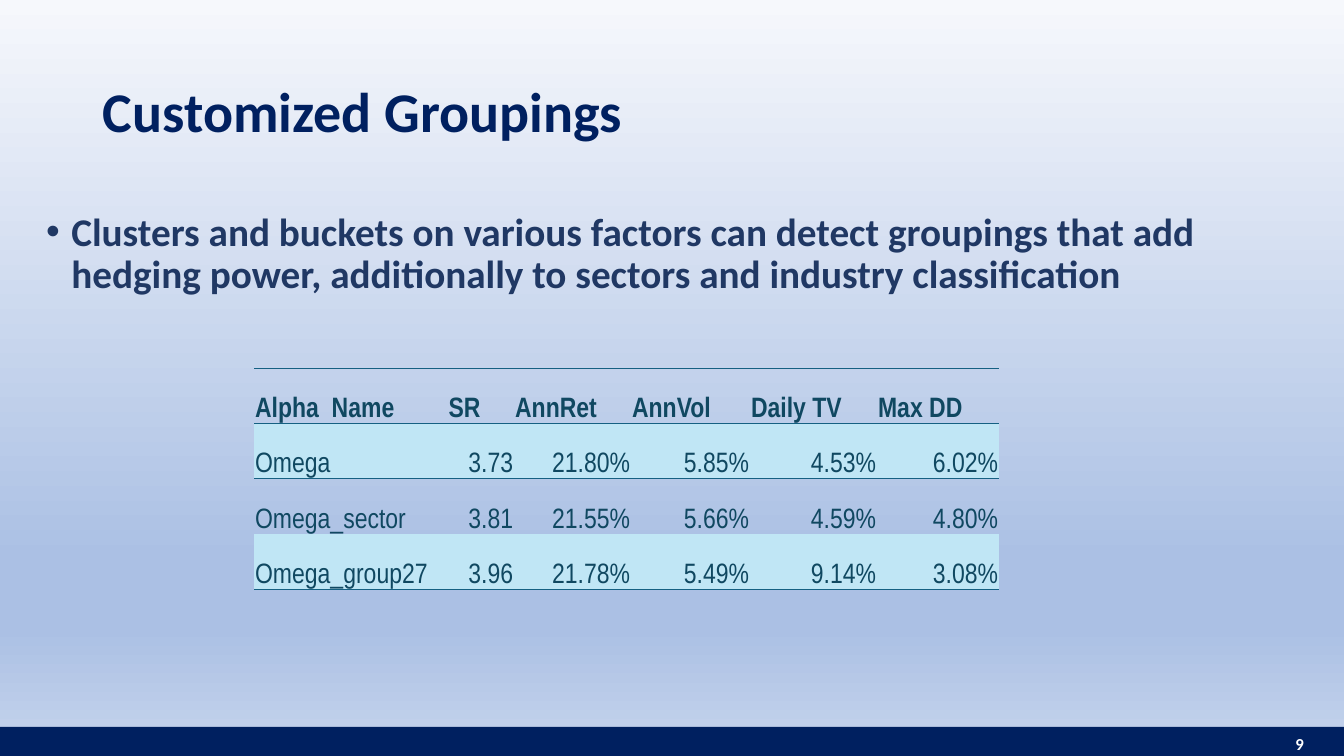
from lxml.etree import SubElement
from pptx import Presentation
from pptx.dml.color import RGBColor
from pptx.enum.shapes import MSO_SHAPE as Shape
from pptx.enum.text import MSO_ANCHOR as Anchor, PP_ALIGN as Align
from pptx.oxml import parse_xml
from pptx.oxml.ns import nsdecls, qn
from pptx.util import Inches, Pt

NAVY = RGBColor(0x00, 0x20, 0x60)
SLATE = RGBColor(0x20, 0x38, 0x64)
WHITE = RGBColor(0xFF, 0xFF, 0xFF)
OUTLINE = RGBColor(0x44, 0x72, 0xC4)
TABLE_TEXT = RGBColor(0x10, 0x48, 0x61)
TABLE_RULE = RGBColor(0x15, 0x60, 0x82)
BAND = RGBColor(0xC0, 0xE6, 0xF5)
BACKGROUND = [
    (0, RGBColor(0xF6, 0xF8, 0xFC)),
    (74, RGBColor(0xAB, 0xC0, 0xE4)),
    (83, RGBColor(0xAB, 0xC0, 0xE4)),
    (100, RGBColor(0xC7, 0xD5, 0xED)),
]
NO_STYLE = "{2D5ABB26-0587-4C30-8999-92F81FD0307C}"

COLUMN_WIDTHS = [1.92, 0.66, 1.16, 1.18, 1.26, 1.21]
ROW_HEIGHT = 0.55
RESULTS = [
    ["Alpha  Name", "SR", "AnnRet", "AnnVol", "Daily TV", "Max DD"],
    ["Omega", "3.73", "21.80%", "5.85%", "4.53%", "6.02%"],
    ["Omega_sector", "3.81", "21.55%", "5.66%", "4.59%", "4.80%"],
    ["Omega_group27", "3.96", "21.78%", "5.49%", "9.14%", "3.08%"],
]


def line_xml(tag, color, points):
    return parse_xml(
        f'<a:{tag} {nsdecls("a")} w="{Pt(points)}"><a:solidFill>'
        f'<a:srgbClr val="{color}"/></a:solidFill></a:{tag}>'
    )


class SlideBuilder:
    font = "Calibri"
    table_font = "Arial Narrow"

    def __init__(self, presentation):
        self.slide = presentation.slides.add_slide(presentation.slide_layouts[5])

    def background(self, stops):
        fill = self.slide.background.fill
        fill.gradient()
        fill.gradient_angle = 270
        stop_list = next(self.slide.element.iter(qn("a:gsLst")))
        for stop in list(stop_list):
            stop_list.remove(stop)
        for position, color in stops:
            stop = SubElement(stop_list, qn("a:gs"), pos=str(position * 1000))
            SubElement(stop, qn("a:srgbClr"), val=str(color))

    def add_words(self, frame, text, size, color, bold=True, align=Align.LEFT,
                  anchor=Anchor.MIDDLE, font=None):
        frame.word_wrap = True
        frame.vertical_anchor = anchor
        paragraph = frame.paragraphs[0]
        paragraph.alignment = align
        run = paragraph.add_run()
        run.text = text
        run.font.name = font or self.font
        run.font.size = Pt(size)
        run.font.bold = bold
        run.font.color.rgb = color
        return paragraph

    def title(self, text, left, top, width, height):
        title = self.slide.shapes.title
        title.left, title.top = Inches(left), Inches(top)
        title.width, title.height = Inches(width), Inches(height)
        paragraph = self.add_words(title.text_frame, text, 40, NAVY)
        paragraph.line_spacing = 0.9
        properties = paragraph.runs[0]._r.get_or_add_rPr()
        properties.insert(0, line_xml("ln", OUTLINE, 1))

    def text(self, text, left, top, width, height, size, color, **style):
        box = self.slide.shapes.add_textbox(
            Inches(left), Inches(top), Inches(width), Inches(height))
        return self.add_words(box.text_frame, text, size, color, **style)

    def bullet(self, text, left, top, width, height):
        paragraph = self.text(text, left, top, width, height, 28, SLATE,
                              anchor=Anchor.TOP)
        properties = paragraph._p.get_or_add_pPr()
        properties.set("marL", str(Inches(0.25)))
        properties.set("indent", str(-Inches(0.25)))
        SubElement(properties, qn("a:buFont"), typeface="Arial")
        SubElement(properties, qn("a:buChar"), char="•")
        paragraph.line_spacing = 0.9

    def bar(self, left, top, width, height, color):
        bar = self.slide.shapes.add_shape(
            Shape.RECTANGLE, Inches(left), Inches(top), Inches(width), Inches(height))
        bar.shadow.inherit = False
        bar.fill.solid()
        bar.fill.fore_color.rgb = color
        bar.line.fill.background()

    def table(self, rows, left, top, widths, row_height):
        frame = self.slide.shapes.add_table(
            len(rows), len(widths), Inches(left), Inches(top),
            Inches(sum(widths)), Inches(row_height * len(rows)))
        table = frame.table
        table.first_row = table.horz_banding = False
        next(table._tbl.iter(qn("a:tableStyleId"))).text = NO_STYLE
        for column, width in zip(table.columns, widths):
            column.width = Inches(width)
        for row_index, values in enumerate(rows):
            table.rows[row_index].height = Inches(row_height)
            for column_index, value in enumerate(values):
                self.cell(table.cell(row_index, column_index), value,
                          row_index, column_index, len(rows) - 1)

    def cell(self, cell, value, row, column, last_row):
        header = row == 0
        cell.margin_left = cell.margin_right = cell.margin_top = Inches(0.01)
        cell.margin_bottom = 0
        self.add_words(cell.text_frame, value, 20, TABLE_TEXT, bold=header,
                       align=Align.LEFT if header or column == 0 else Align.RIGHT,
                       font=self.table_font)
        cell.vertical_anchor = Anchor.BOTTOM
        if row % 2:
            cell.fill.solid()
            cell.fill.fore_color.rgb = BAND
        else:
            cell.fill.background()
        edges = []
        if row <= 1:
            edges.append("lnT")
        if row in (0, last_row):
            edges.append("lnB")
        properties = cell._tc.get_or_add_tcPr()
        for position, edge in enumerate(edges):
            properties.insert(position, line_xml(edge, TABLE_RULE, 0.5))


def main():
    presentation = Presentation()
    presentation.slide_width = Inches(13.33)
    presentation.slide_height = Inches(7.5)
    builder = SlideBuilder(presentation)
    builder.background(BACKGROUND)
    builder.title("Customized Groupings", 0.92, 0.53, 11.96, 1.2)
    builder.bullet(
        "Clusters and buckets on various factors can detect groupings that add "
        "hedging power, additionally to sectors and industry classification",
        0.36, 2.06, 12.35, 4.6)
    builder.bar(0, 7.21, 13.33, 0.29, NAVY)
    builder.text("9", 10.03, 7.18, 3, 0.4, 12, WHITE, align=Align.RIGHT)
    builder.table(RESULTS, 2.52, 3.65, COLUMN_WIDTHS, ROW_HEIGHT)
    presentation.save("out.pptx")


if __name__ == "__main__":
    main()
